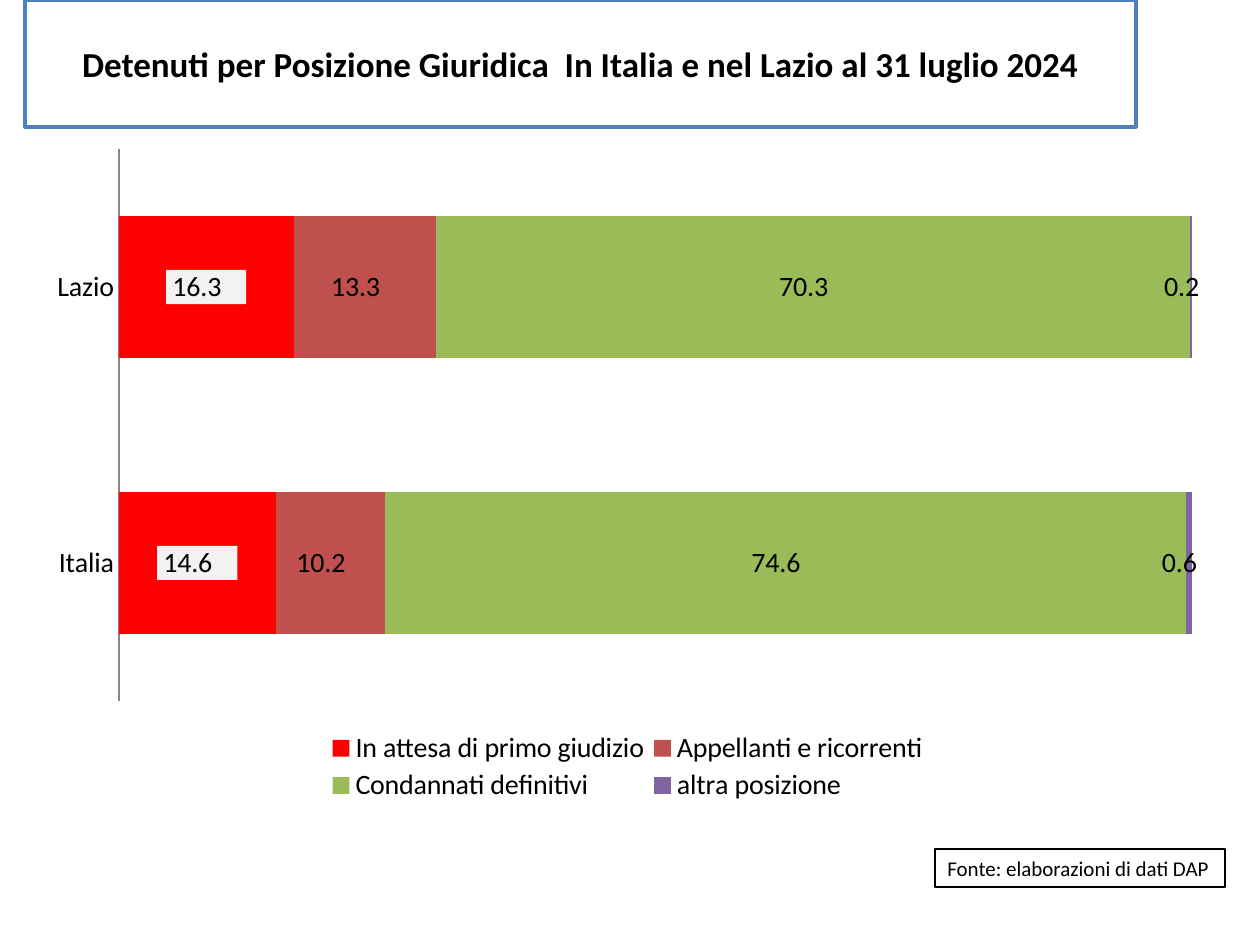
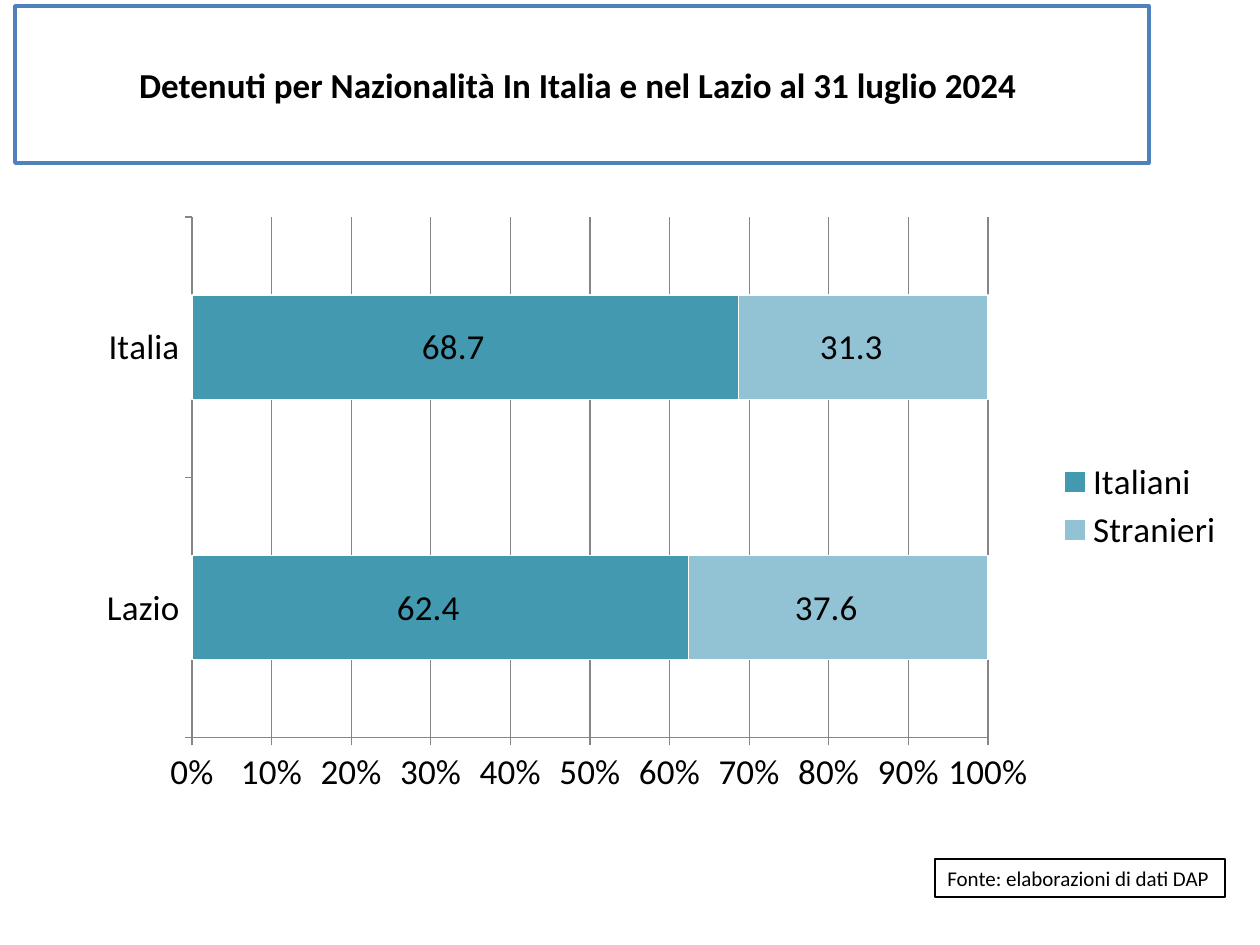
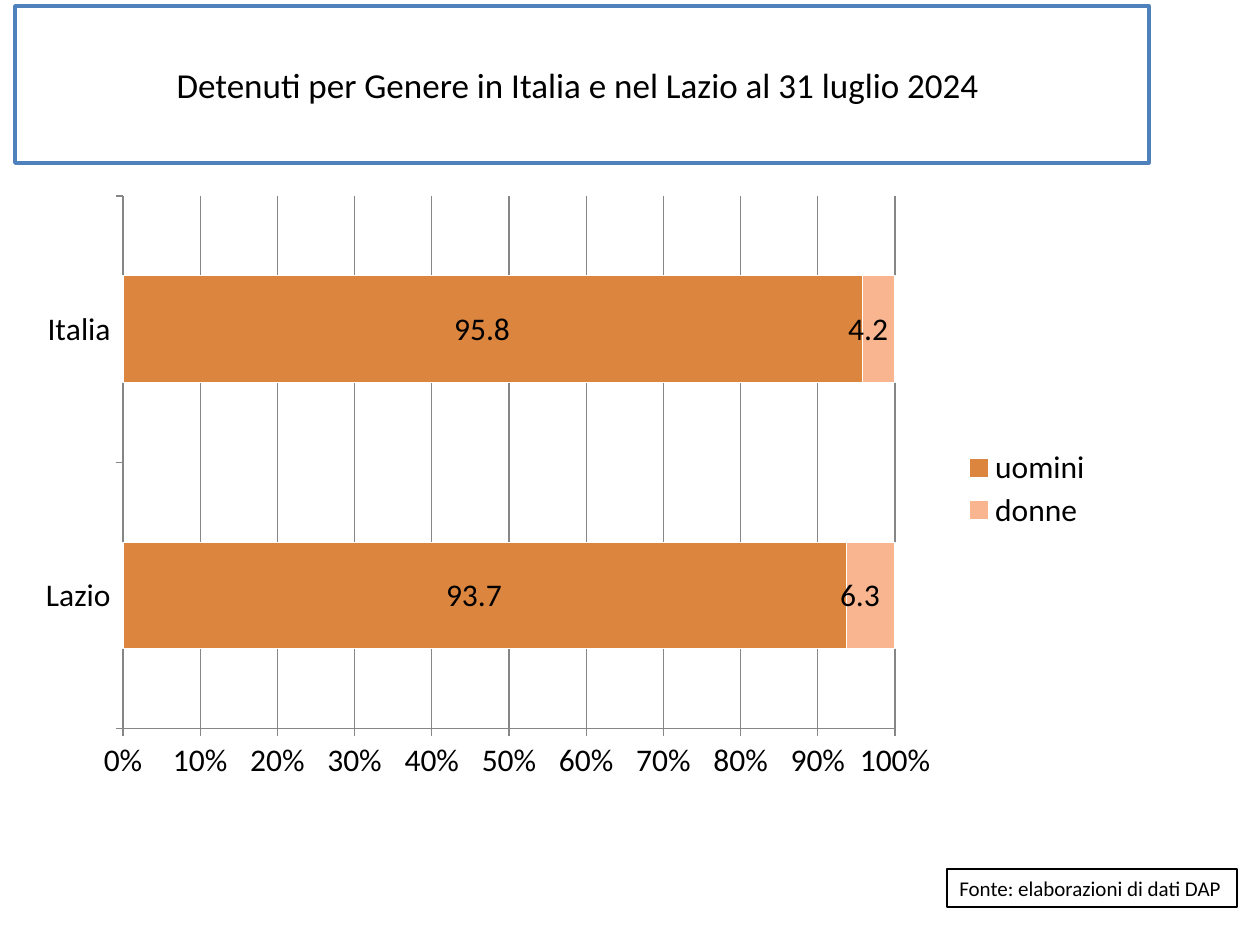
import pptx
import pptx.chart.data
import pptx.dml.color
import pptx.enum.chart
import pptx.enum.shapes
import pptx.enum.text
import pptx.oxml
import pptx.oxml.ns
import pptx.util

EMU_PER_PX = 914400 / 126
FONT = "Calibri"
BLACK, WHITE, BLUE, GREY = "000000", "FFFFFF", "4F81BD", "868686"
LABEL_BACK = "F2F2F2"
LABEL_FORMAT = "_-* #,##0.0\\ _€_-;\\-* #,##0.0\\ _€_-"
SOURCE = "Fonte: elaborazioni di dati DAP"
REGIONS = ["Lazio", "Italia"]
qn = pptx.oxml.ns.qn

SLIDES = [
    {
        "title": "Detenuti per Posizione Giuridica  In Italia e nel Lazio al 31 luglio 2024",
        "title_box": (25, 0, 1111, 127), "bold": True, "source_at": (935, 849),
        "chart": {
            "box": (35, 136, 1189, 674), "plot": (119, 149, 1074, 552),
            "legend": (323, 728, 610, 78), "legend_side": "BOTTOM",
            "size": 16, "gap": 95, "scale_shown": False, "edge": None,
            "series": [
                ("In attesa di primo giudizio", (16.3, 14.6), "FF0000", LABEL_BACK),
                ("Appellanti e ricorrenti", (13.3, 10.2), "C0504D", None),
                ("Condannati definitivi", (70.3, 74.6), "9BBB59", None),
                ("altra posizione", (0.2, 0.6), "8064A2", None),
            ],
        },
    },
    {
        "title": "Detenuti per Nazionalità In Italia e nel Lazio al 31 luglio 2024 ",
        "title_box": (15, 6, 1134, 157), "bold": True, "source_at": (935, 859),
        "chart": {
            "box": (84, 204, 1152, 602), "plot": (192, 217, 796, 521),
            "legend": (1055, 455, 170, 102), "legend_side": "RIGHT",
            "size": 20, "gap": 150, "scale_shown": True, "edge": WHITE,
            "series": [
                ("Italiani", (62.4, 68.7), "4299B0", None),
                ("Stranieri", (37.6, 31.3), "92C3D5", None),
            ],
        },
    },
    {
        "title": "Detenuti per Genere in Italia e nel Lazio al 31 luglio 2024 ",
        "title_box": (15, 6, 1134, 157), "bold": False, "source_at": (947, 869),
        "chart": {
            "box": (25, 185, 1081, 607), "plot": (123, 196, 772, 533),
            "legend": (957, 444, 140, 90), "legend_side": "RIGHT",
            "size": 18, "gap": 150, "scale_shown": True, "edge": WHITE,
            "series": [
                ("uomini", (93.7, 95.8), "DC853E", None),
                ("donne", (6.3, 4.2), "F9B590", None),
            ],
        },
    },
]


def px(length):
    return pptx.util.Emu(round(length * EMU_PER_PX))


def rgb(value):
    return pptx.dml.color.RGBColor.from_string(value)


def apply(target, **values):
    for key, value in values.items():
        setattr(target, key, value)


def style_font(font, size, bold=False):
    apply(font, name=FONT, size=pptx.util.Pt(size), bold=bold)
    font.color.rgb = rgb(BLACK)


def style_line(line, color, width):
    line.color.rgb = rgb(color)
    line.width = pptx.util.Pt(width)


def add_box(slide, text, box, border, border_width, size, bold=False, **frame_values):
    """Add a white, outlined rectangle holding one line of text."""
    panel = slide.shapes.add_shape(
        pptx.enum.shapes.MSO_SHAPE.RECTANGLE, *map(px, box))
    panel.shadow.inherit = False
    panel.fill.solid()
    panel.fill.fore_color.rgb = rgb(WHITE)
    style_line(panel.line, border, border_width)
    apply(panel.text_frame, **frame_values)
    paragraph = panel.text_frame.paragraphs[0]
    run = paragraph.add_run()
    run.text = text
    style_font(run.font, size, bold)
    return paragraph


def add_title(slide, text, box, bold):
    paragraph = add_box(slide, text, box, BLUE, 2, 20, bold, word_wrap=True,
                        vertical_anchor=pptx.enum.text.MSO_ANCHOR.MIDDLE)
    paragraph.alignment = pptx.enum.text.PP_ALIGN.CENTER


def add_source(slide, at):
    paragraph = add_box(slide, SOURCE, (*at, 290, 38), BLACK, 0.75, 12, word_wrap=False,
                        vertical_anchor=pptx.enum.text.MSO_ANCHOR.TOP)
    paragraph.alignment = pptx.enum.text.PP_ALIGN.LEFT


def manual_layout(area, chart_box, inner):
    """Build a c:layout that puts area, in slide px, inside the chart."""
    left, top, width, height = chart_box
    fractions = {"x": (area[0] - left) / width, "y": (area[1] - top) / height,
                 "w": area[2] / width, "h": area[3] / height}
    target = '<c:layoutTarget val="inner"/>' if inner else ""
    modes = '<c:xMode val="edge"/><c:yMode val="edge"/>'
    sizes = "".join(f'<c:{key} val="{value:.4f}"/>' for key, value in fractions.items())
    return pptx.oxml.parse_xml(
        f'<c:layout {pptx.oxml.ns.nsdecls("c")}><c:manualLayout>'
        f"{target}{modes}{sizes}</c:manualLayout></c:layout>")


def place_part(chart, tag, index, layout):
    part = chart.element.find(".//" + qn(tag))
    for old in part.findall(qn("c:layout")):
        part.remove(old)
    part.insert(index, layout)


def style_series(series, color, edge, label_back, size):
    series.format.fill.solid()
    series.format.fill.fore_color.rgb = rgb(color)
    if edge:
        style_line(series.format.line, edge, 0.75)
    labels = series.data_labels
    apply(labels, show_value=True, number_format=LABEL_FORMAT,
          number_format_is_linked=False,
          position=pptx.enum.chart.XL_LABEL_POSITION.CENTER)
    style_font(labels.font, size)
    if label_back:
        number_format = labels._element.find(qn("c:numFmt"))
        number_format.addnext(pptx.oxml.parse_xml(
            f'<c:spPr {pptx.oxml.ns.nsdecls("c", "a")}><a:solidFill>'
            f'<a:srgbClr val="{label_back}"/></a:solidFill></c:spPr>'))


def style_axes(chart, scale_shown):
    marks = pptx.enum.chart.XL_TICK_MARK
    tick = marks.OUTSIDE if scale_shown else marks.NONE
    for axis in (chart.category_axis, chart.value_axis):
        apply(axis, major_tick_mark=tick, minor_tick_mark=marks.NONE,
              has_major_gridlines=False)
        style_line(axis.format.line, GREY, 0.75)
    chart.category_axis.reverse_order = not scale_shown
    scale = chart.value_axis
    apply(scale, visible=scale_shown, has_major_gridlines=scale_shown)
    if scale_shown:
        style_line(scale.major_gridlines.format.line, GREY, 0.75)
        apply(scale.tick_labels, number_format="0%", number_format_is_linked=False)


def add_share_chart(slide, box, plot, legend, legend_side, size, gap,
                    scale_shown, edge, series):
    data = pptx.chart.data.CategoryChartData()
    data.categories = REGIONS
    for name, values, _, _ in series:
        data.add_series(name, values)
    chart = slide.shapes.add_chart(
        pptx.enum.chart.XL_CHART_TYPE.BAR_STACKED_100, *map(px, box), data).chart
    apply(chart, has_title=False, has_legend=True)
    style_font(chart.font, size)
    bars = chart.plots[0]
    apply(bars, gap_width=gap, overlap=100, vary_by_categories=False)
    for bar, (_, _, color, label_back) in zip(bars.series, series):
        style_series(bar, color, edge, label_back, size)
    style_axes(chart, scale_shown)
    apply(chart.legend, include_in_layout=False,
          position=getattr(pptx.enum.chart.XL_LEGEND_POSITION, legend_side))
    style_font(chart.legend.font, size)
    place_part(chart, "c:plotArea", 0, manual_layout(plot, box, True))
    place_part(chart, "c:legend", 1, manual_layout(legend, box, False))


def main():
    deck = pptx.Presentation()
    apply(deck, slide_width=px(1260), slide_height=px(945))
    for content in SLIDES:
        slide = deck.slides.add_slide(deck.slide_layouts[6])
        add_title(slide, content["title"], content["title_box"], content["bold"])
        add_source(slide, content["source_at"])
        add_share_chart(slide, **content["chart"])
    deck.save("out.pptx")


if __name__ == "__main__":
    main()
